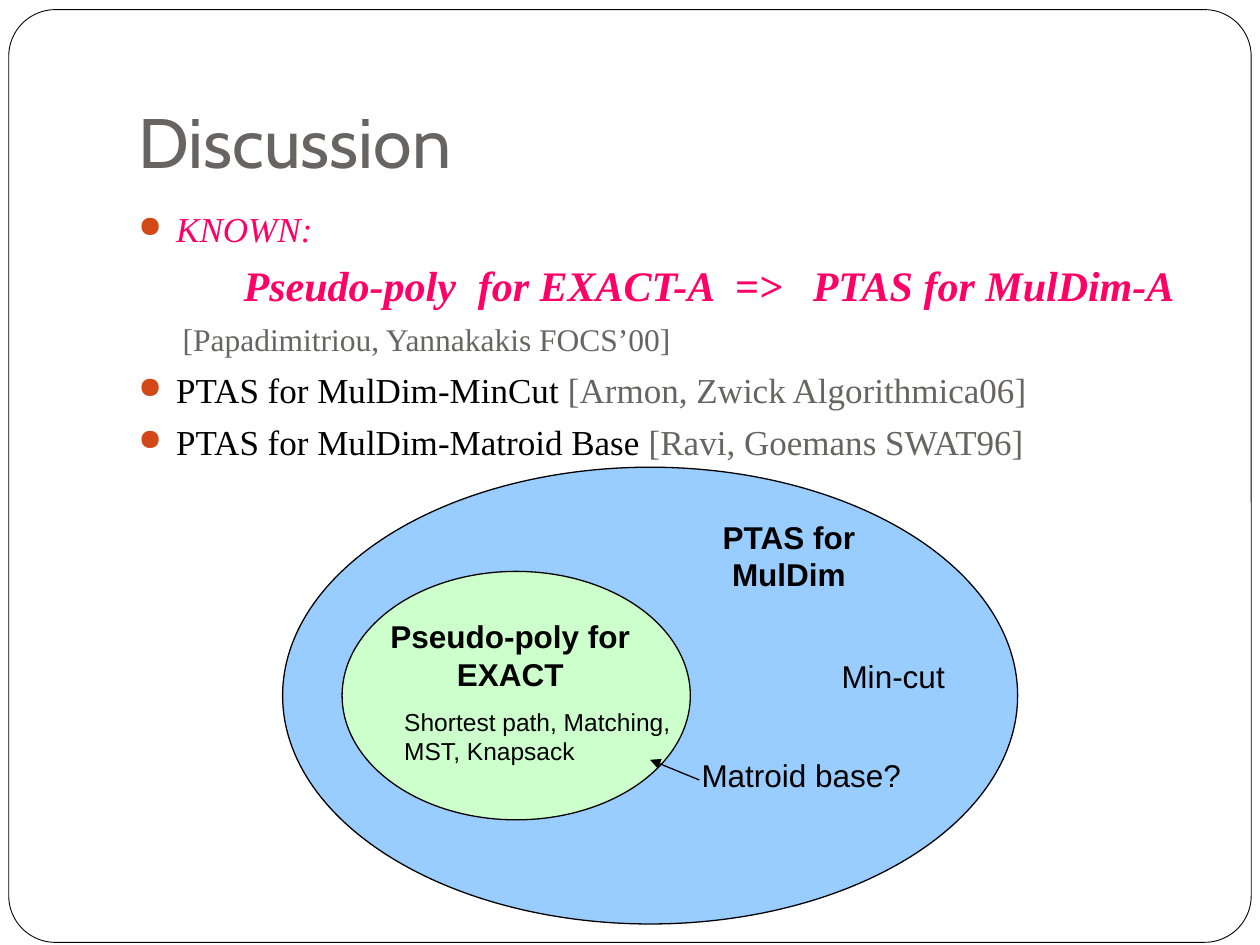
from lxml.etree import SubElement as Sub
from pptx import Presentation as Deck
from pptx.dml.color import RGBColor as Color
from pptx.enum.shapes import MSO_CONNECTOR as Link, MSO_SHAPE as Form
from pptx.enum.text import MSO_ANCHOR as Anchor, PP_ALIGN as Align
from pptx.oxml.ns import qn
from pptx.util import Pt

INK = {"black": "000000", "white": "FFFFFF", "gray": "696464", "pink": "FF0066",
       "rust": "D34817", "blue": "99CCFF", "green": "CCFFCC"}
SERIF = "Times New Roman"


def tint(name):
    """Return the named colour."""
    return Color.from_string(INK[name])


def style(run, face, size, ink, bold=False, slant=False):
    """Set the font of a run."""
    font = run.font
    font.name, font.size = face, Pt(size)
    font.bold, font.italic = bold, slant
    font.color.rgb = tint(ink)


def add_form(slide, kind, box, fill, width):
    """Add a filled, outlined shape."""
    form = slide.shapes.add_shape(kind, *map(Pt, box))
    form.shadow.inherit = False
    form.fill.solid()
    form.fill.fore_color.rgb = tint(fill)
    form.line.color.rgb = tint("black")
    form.line.width = Pt(width)
    return form


def add_box(slide, box):
    """Add a wrapping text box and return its frame."""
    frame = slide.shapes.add_textbox(*map(Pt, box)).text_frame
    frame.word_wrap = True
    return frame


def add_title(slide, text):
    """Add the heading, resting on the bottom of its box."""
    frame = add_box(slide, (72, 21.6, 612, 90))
    frame.vertical_anchor = Anchor.BOTTOM
    frame.margin_bottom = Pt(7.2)
    frame.text = text
    style(frame.paragraphs[0].runs[0], "Cabin", 40, "gray")


def add_label(slide, box, text, size=18, bold=False, align=Align.LEFT):
    """Add a diagram label."""
    frame = add_box(slide, box)
    frame.text = text
    para = frame.paragraphs[0]
    para.alignment = align
    style(para.runs[0], "Arial", size, "black", bold)


def set_bullet(para):
    """Give a paragraph a round bullet with a hanging indent."""
    props = para._p.get_or_add_pPr()
    props.set("marL", str(Pt(21.6)))
    props.set("indent", str(Pt(-21.6)))
    Sub(Sub(props, qn("a:buClr")), qn("a:srgbClr"), val=INK["rust"])
    Sub(props, qn("a:buSzPct"), val="85000")
    Sub(props, qn("a:buChar"), char="●")


def set_tabs(para, stops):
    """Give a paragraph left tab stops."""
    tabs = Sub(para._p.get_or_add_pPr(), qn("a:tabLst"))
    for stop in stops:
        Sub(tabs, qn("a:tab"), pos=str(Pt(stop)), algn="l")


def add_list(slide, rows):
    """Add the body text, one row of bullet, tabs and runs a paragraph."""
    frame = add_box(slide, (72, 115, 612, 360))
    for index, (bullet, stops, parts) in enumerate(rows):
        para = frame.add_paragraph() if index else frame.paragraphs[0]
        para.space_before = Pt(5.8 if index else 0)
        if bullet:
            set_bullet(para)
        if stops:
            set_tabs(para, stops)
        for text, *look in parts:
            run = para.add_run()
            run.text = text
            style(run, SERIF, *look)


def add_arrow(slide, start, end):
    """Add a thin line with a triangle at its end."""
    line = slide.shapes.add_connector(Link.STRAIGHT, *map(Pt, start + end))
    line.line.color.rgb = tint("black")
    line.line.width = Pt(0.75)
    Sub(line.line._get_or_add_ln(), qn("a:tailEnd"), type="triangle")
    Sub(line._element.spPr, qn("a:effectLst"))


def main():
    """Build the slide and save it."""
    deck = Deck()
    deck.slide_width, deck.slide_height = Pt(720), Pt(540)
    slide = deck.slides.add_slide(deck.slide_layouts[6])

    frame = add_form(slide, Form.ROUNDED_RECTANGLE, (5, 5.5, 710, 533), "white", 0.5)
    frame.adjustments[0] = 0.05
    add_title(slide, "Discussion")
    add_list(slide, [
        (True, (), [("KNOWN:", 20, "pink", False, True)]),
        (False, (60.2, 194, 340.8, 385.4),
         [("\tPseudo-poly\tfor EXACT-A\t=>\tPTAS for MulDim-A", 24, "pink", True, True)]),
        (False, (25.3,), [("\t[Papadimitriou, Yannakakis FOCS’00]", 18, "gray")]),
        (True, (), [("PTAS for MulDim-MinCut ", 20, "black"),
                    ("[Armon, Zwick Algorithmica06]", 20, "gray")]),
        (True, (), [("PTAS for MulDim-Matroid Base ", 20, "black"),
                    ("[Ravi, Goemans SWAT96]", 20, "gray")]),
    ])

    add_form(slide, Form.OVAL, (161.5, 267, 420, 261), "blue", 0.75)
    add_form(slide, Form.OVAL, (195.5, 326.5, 199, 142), "green", 0.75)
    add_label(slide, (206.6, 349.2, 170, 50.4), "Pseudo-poly for EXACT",
              bold=True, align=Align.CENTER)
    add_label(slide, (377, 292.3, 147.6, 50.4), "PTAS for MulDim",
              bold=True, align=Align.CENTER)
    add_label(slide, (223.9, 400.3, 170, 41), "Shortest path, Matching, MST, Knapsack", 14)
    add_label(slide, (473.8, 372.2, 85, 28.8), "Min-cut")
    add_label(slide, (393.8, 428.4, 147.6, 28.8), "Matroid base?")
    add_arrow(slide, (399.6, 445.7), (371.5, 434.2))
    deck.save("out.pptx")


if __name__ == "__main__":
    main()
